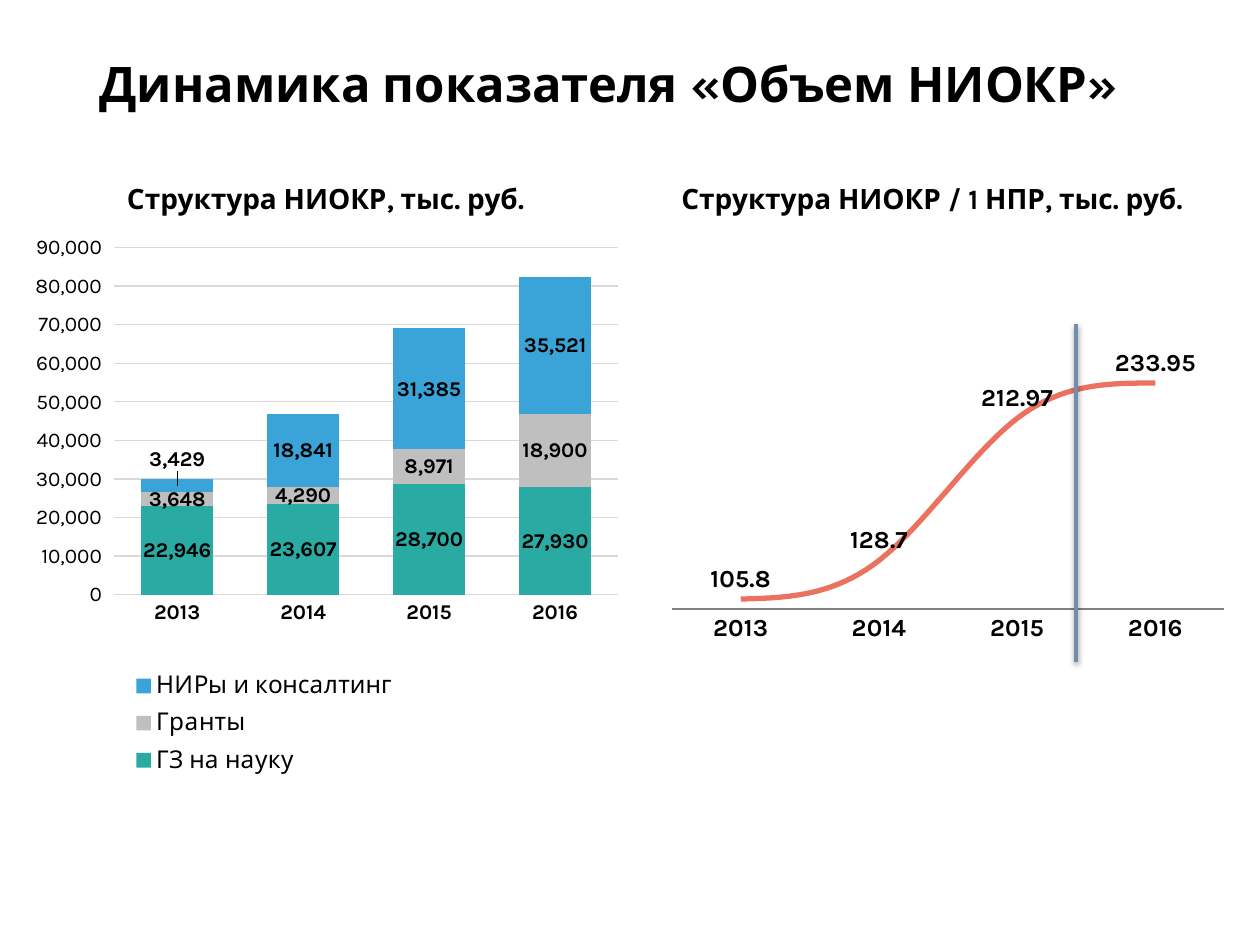
from lxml import etree
from pptx import Presentation
from pptx.chart.data import CategoryChartData
from pptx.dml.color import RGBColor
from pptx.enum.chart import XL_CHART_TYPE, XL_LABEL_POSITION, XL_LEGEND_POSITION, XL_TICK_MARK
from pptx.enum.shapes import MSO_CONNECTOR
from pptx.enum.text import MSO_ANCHOR, MSO_AUTO_SIZE, PP_ALIGN
from pptx.oxml import parse_xml
from pptx.oxml.ns import nsdecls, qn
from pptx.util import Inches, Pt

STACKED, LINE = XL_CHART_TYPE.COLUMN_STACKED, XL_CHART_TYPE.LINE
ABOVE, RIGHT = XL_LABEL_POSITION.ABOVE, XL_LEGEND_POSITION.RIGHT
NO_TICK, TICK_OUT = XL_TICK_MARK.NONE, XL_TICK_MARK.OUTSIDE
STRAIGHT = MSO_CONNECTOR.STRAIGHT
MIDDLE, LEFT, GROW = MSO_ANCHOR.MIDDLE, PP_ALIGN.LEFT, MSO_AUTO_SIZE.SHAPE_TO_FIT_TEXT

FONT = "Karla"
COLORS = {"text": "000000", "state": "29ABA4", "grants": "BFBFBF", "research": "3AA4D9",
          "curve": "EB7260", "grid": "D9D9D9", "axis": "808080", "divider": "758CAC"}
YEARS = ["2013", "2014", "2015", "2016"]
THOUSANDS = "#,##0"
FUNDING = [("ГЗ на науку", [22946, 23607, 28700, 27930], "state"),
           ("Гранты", [3648, 4290, 8971, 18900], "grants"),
           ("НИРы и консалтинг", [3429, 18841, 31385, 35521], "research")]
PER_HEAD = [("Series 1", [105.8, 128.7, 212.97, 233.95], "curve")]


def rgb(name):
    return RGBColor.from_string(COLORS[name])


def style_font(font, size=12, bold=False, color="text"):
    font.name, font.size, font.bold = FONT, Pt(size), bold
    font.color.rgb = rgb(color)


def write(tf, text, align=LEFT, **style):
    p = tf.paragraphs[0]
    p.alignment = align
    r = p.add_run()
    r.text = text
    style_font(r.font, **style)


def style_line(line, color, width):
    line.color.rgb = rgb(color)
    line.width = Pt(width)


def set_layout(parent, index, inner=False, edge=True, **fractions):
    for old in parent.findall(qn("c:layout")):
        parent.remove(old)
    layout = parse_xml(f"<c:layout {nsdecls('c')}><c:manualLayout/></c:layout>")
    values = [("layoutTarget", "inner")] if inner else []
    if edge:
        values += [("xMode", "edge"), ("yMode", "edge")]
    for tag, value in values + list(fractions.items()):
        etree.SubElement(layout[0], qn(f"c:{tag}")).set("val", str(value))
    parent.insert(index, layout)


class Deck:
    """Holds the shared style and the current slide."""

    def __init__(self, prs):
        self.s = prs.slides.add_slide(prs.slide_layouts[5])

    def title(self, text, x, y, w, h):
        sp = self.s.shapes.title
        sp.left, sp.top, sp.width, sp.height = map(Inches, (x, y, w, h))
        sp.text_frame.vertical_anchor = MIDDLE
        write(sp.text_frame, text, size=28, bold=True)

    def heading(self, text, x, y, w, h):
        tf = self.s.shapes.add_textbox(*map(Inches, (x, y, w, h))).text_frame
        tf.word_wrap = False
        tf.auto_size = GROW
        write(tf, text, size=16, bold=True)

    def chart(self, kind, rows, box, plot, size, number_format):
        data = CategoryChartData(number_format=number_format)
        data.categories = YEARS
        for name, values, _ in rows:
            data.add_series(name, values)
        chart = self.s.shapes.add_chart(kind, *map(Inches, box), data).chart
        chart.has_title = chart.has_legend = False
        style_font(chart.font, size=size)
        axis = chart.category_axis
        axis.major_tick_mark = axis.minor_tick_mark = NO_TICK
        axis.has_major_gridlines = False
        style_font(axis.tick_labels.font, size=size, bold=True)
        for series in chart.plots[0].series:
            labels = series.data_labels
            labels.show_value = True
            labels.number_format, labels.number_format_is_linked = number_format, False
            style_font(labels.font, size=size, bold=True)
        x, y, w, h = plot
        set_layout(chart._chartSpace.chart.plotArea, 0, inner=True, x=x, y=y, w=w, h=h)
        return chart

    def columns(self, rows, *box):
        chart = self.chart(STACKED, rows, box, (0.126, 0.035, 0.854, 0.522), 12, THOUSANDS)
        plot = chart.plots[0]
        plot.gap_width, plot.overlap, plot.vary_by_categories = 75, 100, False
        for series, (_, _, color) in zip(plot.series, rows):
            series.format.fill.solid()
            series.format.fill.fore_color.rgb = rgb(color)
        label = series.points[0].data_label
        style_font(label.font, bold=True)
        set_layout(series._element.find(".//" + qn("c:dLbl")), 1, edge=False, x=0, y=-0.04)
        style_line(chart.category_axis.format.line, "grid", 0.75)
        axis = chart.value_axis
        axis.major_tick_mark, axis.minor_tick_mark = TICK_OUT, NO_TICK
        axis.minimum_scale, axis.maximum_scale, axis.major_unit = 0, 90000, 10000
        axis.format.line.fill.background()
        style_line(axis.major_gridlines.format.line, "grid", 0.75)
        axis.tick_labels.number_format = THOUSANDS
        axis.tick_labels.number_format_is_linked = False
        style_font(axis.tick_labels.font)
        chart.has_legend = True
        chart.legend.position, chart.legend.include_in_layout = RIGHT, False
        style_font(chart.legend.font, size=14)
        set_layout(chart.legend._element, 1, x=0.13, y=0.66, w=0.5, h=0.18)

    def curve(self, rows, *box):
        chart = self.chart(LINE, rows, box, (0.02, 0.07, 0.96, 0.8), 14, "General")
        chart.plots[0].vary_by_categories = False
        series = chart.plots[0].series[0]
        series.smooth = True
        style_line(series.format.line, rows[0][2], 3)
        series.data_labels.position = ABOVE
        style_line(chart.category_axis.format.line, "axis", 0.75)
        axis = chart.value_axis
        axis.minimum_scale, axis.maximum_scale = 100, 250
        axis.has_major_gridlines = axis.visible = False

    def divider(self, x, top, bottom):
        line = self.s.shapes.add_connector(STRAIGHT, *map(Inches, (x, top, x, bottom)))
        style_line(line.line, "divider", 2)
        line._element.spPr.append(parse_xml(
            f'<a:effectLst {nsdecls("a")}><a:outerShdw blurRad="{Pt(3.1)}" dist="{Pt(1.6)}" '
            f'dir="5400000" rotWithShape="0"><a:srgbClr val="{COLORS["text"]}">'
            '<a:alpha val="38000"/></a:srgbClr></a:outerShdw></a:effectLst>'))


def main():
    prs = Presentation()
    prs.slide_width, prs.slide_height = Inches(10), Inches(7.5)
    deck = Deck(prs)
    deck.title("Динамика показателя «Объем НИОКР»", 0.69, 0.4, 8.62, 0.52)
    deck.columns(FUNDING, 0.28, 1.78, 4.72, 5.28)
    deck.curve(PER_HEAD, 5.24, 2.65, 4.57, 2.51)
    deck.heading("Структура НИОКР, тыс. руб.", 0.91, 1.39, 3.47, 0.37)
    deck.heading("Структура НИОКР / 1 НПР, тыс. руб.", 5.31, 1.39, 4.44, 0.37)
    deck.divider(8.54, 2.57, 5.25)
    prs.save("out.pptx")


if __name__ == "__main__":
    main()
